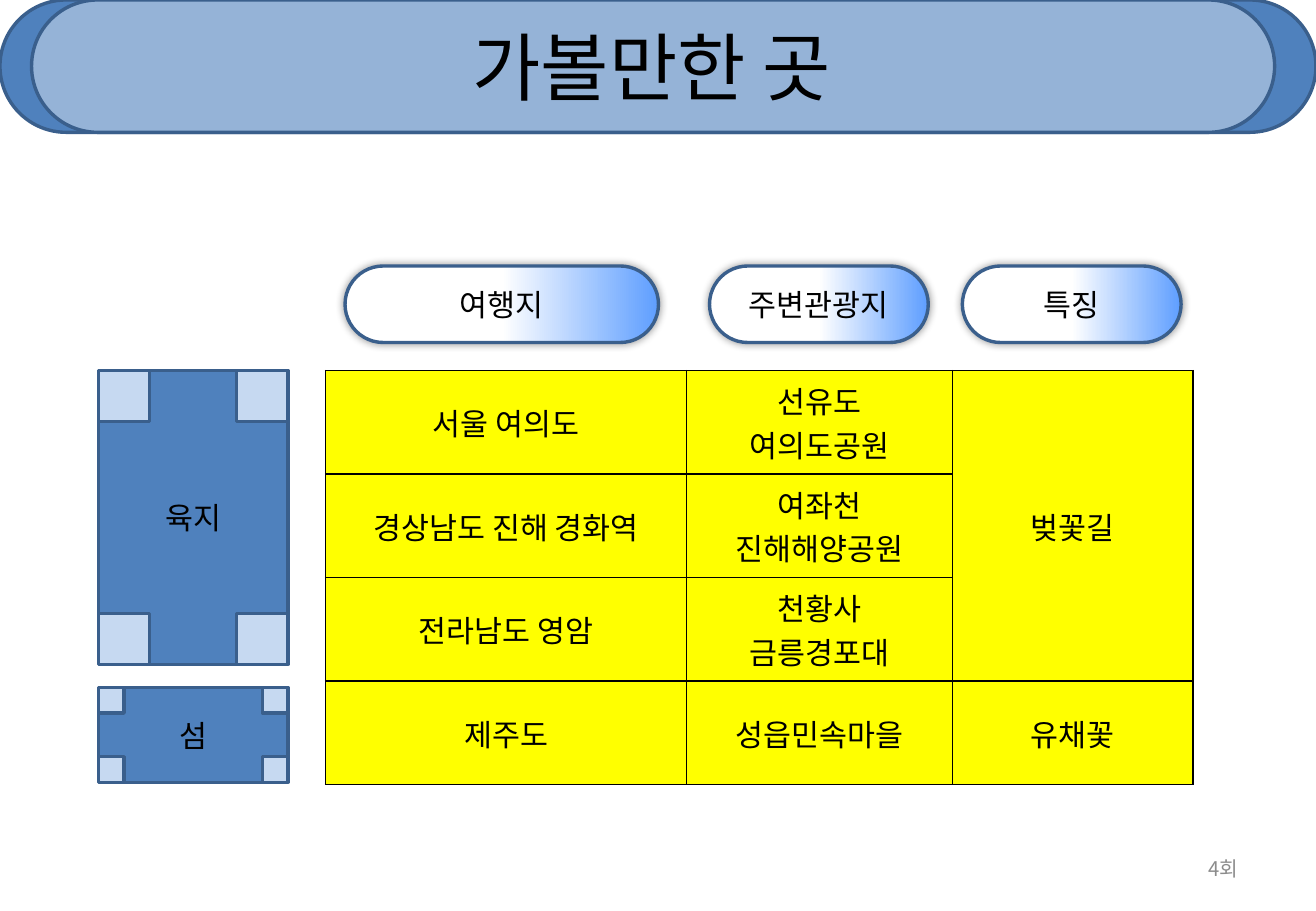
from lxml.etree import SubElement
from pptx import Presentation
from pptx.dml.color import RGBColor
from pptx.enum.shapes import MSO_SHAPE
from pptx.enum.text import MSO_ANCHOR, PP_ALIGN
from pptx.oxml import parse_xml
from pptx.oxml.ns import nsdecls, qn
from pptx.util import Inches, Pt

SLIDE_WIDTH = Inches(10.83)
SLIDE_HEIGHT = Inches(7.5)
FONT = "Noto Sans CJK KR"

BLACK = RGBColor(0x00, 0x00, 0x00)
GRAY = RGBColor(0x8C, 0x8C, 0x8C)
WHITE = RGBColor(0xFF, 0xFF, 0xFF)
YELLOW = RGBColor(0xFF, 0xFF, 0x00)
BLUE = RGBColor(0x4F, 0x81, 0xBD)
MID_BLUE = RGBColor(0x95, 0xB3, 0xD7)
PALE_BLUE = RGBColor(0xC6, 0xD9, 0xF1)
GLOW_BLUE = RGBColor(0x5E, 0x9E, 0xFF)
OUTLINE = RGBColor(0x3A, 0x5F, 0x8C)

BANNER_HEIGHT = 14.53
TABLE_LEFT, TABLE_TOP = 24.75, 40.67
COLUMN_WIDTHS = (27.42, 20.22, 18.28)
ROW_HEIGHT = 11.36
HEADERS = (("여행지", 26.22, 23.82), ("주변관광지", 53.92, 16.62), ("특징", 73.13, 16.62))
PLAQUES = (("육지", TABLE_TOP, 32.27), ("섬", 75.47, 10.4))
PLACES = (
    (("서울 여의도",), ("선유도", "여의도공원"), ("벚꽃길",)),
    (("경상남도 진해 경화역",), ("여좌천", "진해해양공원"), ()),
    (("전라남도 영암",), ("천황사", "금릉경포대"), ()),
    (("제주도",), ("성읍민속마을",), ("유채꽃",)),
)


def across(percent):
    return round(SLIDE_WIDTH * percent / 100)


def down(percent):
    return round(SLIDE_HEIGHT * percent / 100)


def area(left, top, width, height):
    return across(left), down(top), across(width), down(height)


def write(text_frame, lines, size=18, color=BLACK, align=PP_ALIGN.CENTER):
    text_frame.word_wrap = True
    text_frame.vertical_anchor = MSO_ANCHOR.MIDDLE
    for index, line in enumerate(lines):
        paragraph = text_frame.add_paragraph() if index else text_frame.paragraphs[0]
        paragraph.alignment = align
        run = paragraph.add_run()
        run.text = line
        run.font.size = Pt(size)
        run.font.color.rgb = color
        run.font.name = FONT
        SubElement(run.font._element, qn("a:ea"), typeface=FONT)


def add_outlined(slide, kind, box, color=None, adjustment=None):
    shape = slide.shapes.add_shape(kind, *area(*box))
    shape.shadow.inherit = False
    shape.line.color.rgb = OUTLINE
    shape.line.width = Pt(2)
    if color is not None:
        shape.fill.solid()
        shape.fill.fore_color.rgb = color
    if adjustment is not None:
        shape.adjustments[0] = adjustment
    return shape


def add_title(slide, text):
    for left, width, color in ((0, 100, BLUE), (2.4, 94.46, MID_BLUE)):
        box = (left, 0, width, BANNER_HEIGHT)
        add_outlined(slide, MSO_SHAPE.ROUNDED_RECTANGLE, box, color, 0.5)
    title = slide.shapes.title
    title.left, title.top, title.width, title.height = area(4.52, 0, 90.03, BANNER_HEIGHT)
    write(title.text_frame, [text], 44)
    title.element.getparent().append(title.element)


def add_header(slide, text, left, width):
    box = (left, 29.2, width, 8.4)
    header = add_outlined(slide, MSO_SHAPE.ROUNDED_RECTANGLE, box, adjustment=0.5)
    header.fill.gradient()
    header.fill.gradient_angle = 180
    for stop, position, color in zip(header.fill.gradient_stops, (0, 0.5), (GLOW_BLUE, WHITE)):
        stop.position = position
        stop.color.rgb = color
    effects = header.element.spPr.find(qn("a:effectLst"))
    effects.append(parse_xml(
        f'<a:outerShdw {nsdecls("a")} blurRad="{Pt(5)}" dist="0" dir="0" rotWithShape="0">'
        f'<a:srgbClr val="{BLACK}"><a:alpha val="40000"/></a:srgbClr></a:outerShdw>'
    ))
    write(header.text_frame, [text])


def add_plaque(slide, text, top, height):
    box = (7.48, top, 14.4, height)
    add_outlined(slide, MSO_SHAPE.RECTANGLE, box, PALE_BLUE)
    plaque = add_outlined(slide, MSO_SHAPE.CROSS, box, BLUE, 0.27)
    write(plaque.text_frame, [text])


def add_borders(cell):
    properties = cell._tc.get_or_add_tcPr()
    for index, side in enumerate(("lnL", "lnR", "lnT", "lnB")):
        properties.insert(index, parse_xml(
            f'<a:{side} {nsdecls("a")} w="{Pt(1)}"><a:solidFill>'
            f'<a:srgbClr val="{BLACK}"/></a:solidFill></a:{side}>'
        ))


def add_places(slide):
    box = (TABLE_LEFT, TABLE_TOP, sum(COLUMN_WIDTHS), ROW_HEIGHT * len(PLACES))
    table = slide.shapes.add_table(len(PLACES), len(COLUMN_WIDTHS), *area(*box)).table
    table.first_row = False
    table.horz_banding = False
    for column, width in zip(table.columns, COLUMN_WIDTHS):
        column.width = across(width)
    for row, places in zip(table.rows, PLACES):
        row.height = down(ROW_HEIGHT)
        for cell, lines in zip(row.cells, places):
            cell.fill.solid()
            cell.fill.fore_color.rgb = YELLOW
            cell.vertical_anchor = MSO_ANCHOR.MIDDLE
            add_borders(cell)
            write(cell.text_frame, lines)
            cell.text_frame._txBody.bodyPr.attrib.clear()
    table.cell(0, 2).merge(table.cell(2, 2))


def add_page_number(slide, text):
    number = slide.shapes.add_textbox(*area(71.65, 92.67, 23.36, 5.33))
    write(number.text_frame, [text], 12, GRAY, PP_ALIGN.RIGHT)


def main():
    presentation = Presentation()
    presentation.slide_width = SLIDE_WIDTH
    presentation.slide_height = SLIDE_HEIGHT
    slide = presentation.slides.add_slide(presentation.slide_layouts[5])
    add_title(slide, "가볼만한 곳")
    add_places(slide)
    add_page_number(slide, "4회")
    for header in HEADERS:
        add_header(slide, *header)
    for plaque in PLAQUES:
        add_plaque(slide, *plaque)
    presentation.save("out.pptx")


if __name__ == "__main__":
    main()
